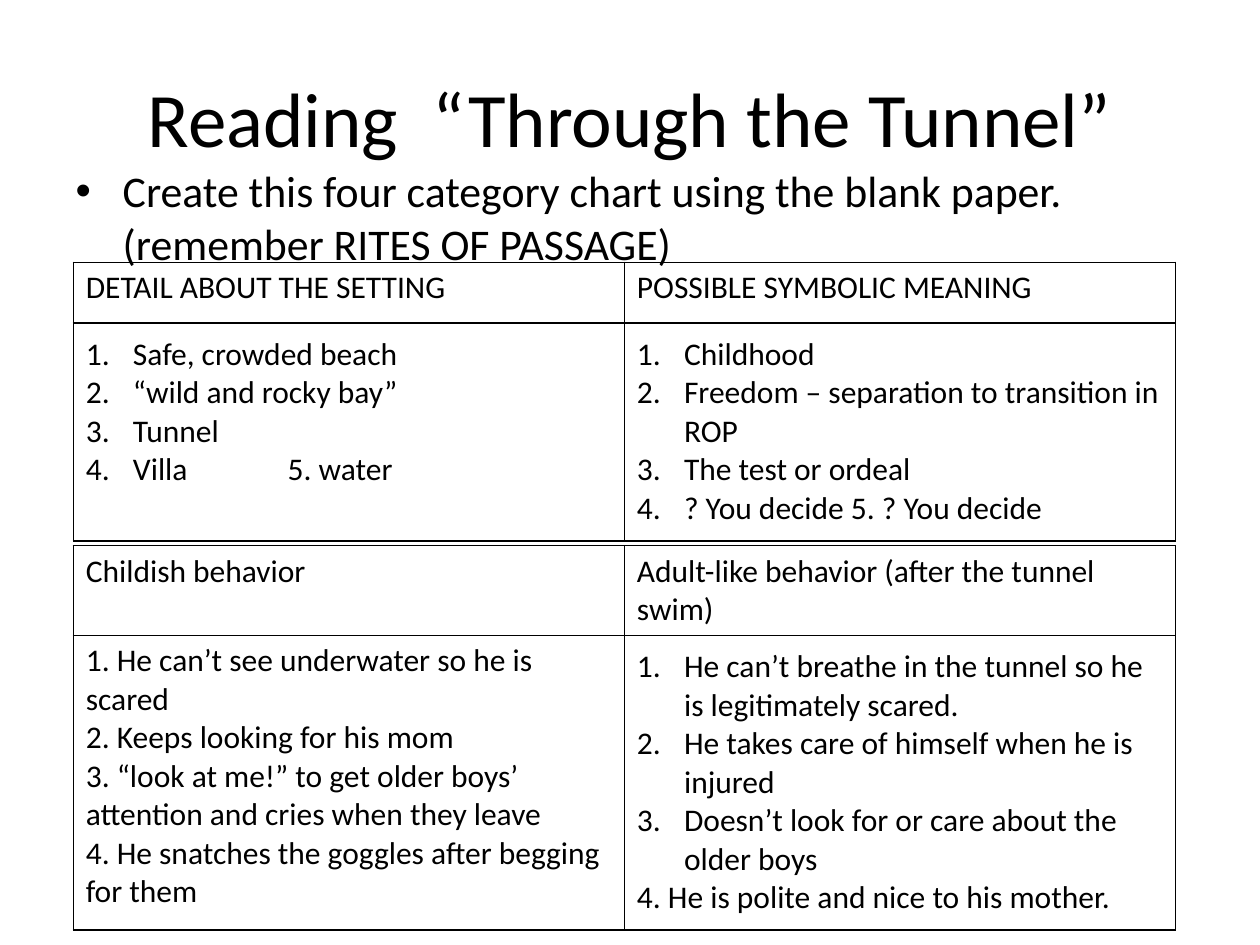
from lxml import etree
from pptx import Presentation
from pptx.dml.color import RGBColor
from pptx.enum import text
from pptx.oxml import ns
from pptx.util import Cm, Pt

# Content: each cell is (numbered items, plain paragraphs)
TITLE = "Reading  “Through the Tunnel”"
TASK = ("Create this four category chart using the blank paper. "
        "(remember RITES OF PASSAGE)")
SETTING = [
    [([], ["DETAIL ABOUT THE SETTING"]), ([], ["POSSIBLE SYMBOLIC MEANING"])],
    [(["Safe, crowded beach", "“wild and rocky bay”", "Tunnel",
       "Villa\t5. water"], []),
     (["Childhood", "Freedom – separation to transition in ROP",
       "The test or ordeal", "? You decide 5. ? You decide"], [])],
]
BEHAVIOR = [
    [([], ["Childish behavior"]),
     ([], ["Adult-like behavior (after the tunnel swim)"])],
    [([], ["1. He can’t see underwater so he is scared",
           "2. Keeps looking for his mom",
           "3. “look at me!” to get older boys’ attention and cries "
           "when they leave",
           "4. He snatches the goggles after begging for them"]),
     (["He can’t breathe in the tunnel so he is legitimately scared.",
       "He takes care of himself when he is injured",
       "Doesn’t look for or care about the older boys"],
      ["4. He is polite and nice to his mother."])],
]

# Layout
TABLE_LEFT, COL_W = Cm(1.48), Cm(11.11)
TABLES = [(SETTING, Cm(5.29), [Cm(1.22), Cm(4.4)]),
          (BEHAVIOR, Cm(11), [Cm(1.8), Cm(5.94)])]
INDENT, TAB = Cm(0.95), Cm(4.07)
BLACK = "000000"


def rgb(code):
    return RGBColor.from_string(code)


def add_child(parent, tag, **attrs):
    child = etree.SubElement(parent, ns.qn(tag))
    for key, value in attrs.items():
        child.set(key, str(value))
    return child


def write(p, words, size=18, align=text.PP_ALIGN.LEFT, bullet=None):
    """Fill a paragraph; bullet is a (tag, attributes) pair."""
    p.alignment = align
    r = p.add_run()
    r.text = words
    r.font.size, r.font.name = Pt(size), "Calibri"
    r.font.color.rgb = rgb(BLACK)
    if bullet:
        tag, attrs = bullet
        pPr = p._p.get_or_add_pPr()
        pPr.set("marL", str(INDENT))
        pPr.set("indent", str(-INDENT))
        add_child(pPr, "a:buFont", typeface="Arial" if tag == "a:buChar" else "+mj-lt")
        add_child(pPr, tag, **attrs)
        if "\t" in words:
            add_child(add_child(pPr, "a:tabLst"), "a:tab", pos=TAB, algn="l")


def add_borders(cell):
    tcPr = cell._tc.get_or_add_tcPr()
    for i, side in enumerate(("a:lnL", "a:lnR", "a:lnT", "a:lnB")):
        ln = etree.Element(ns.qn(side), w=str(Pt(1)))
        add_child(add_child(ln, "a:solidFill"), "a:srgbClr", val=BLACK)
        tcPr.insert(i, ln)


def fill_cell(cell, numbered, plain):
    cell.fill.background()
    cell.margin_left = cell.margin_right = Cm(0.25)
    cell.margin_top = cell.margin_bottom = Cm(0.25 if numbered else 0.13)
    number = ("a:buAutoNum", {"type": "arabicPeriod"})
    items = [(t, number) for t in numbered] + [(t, None) for t in plain]
    tf = cell.text_frame
    for i, (words, bullet) in enumerate(items):
        p = tf.add_paragraph() if i else tf.paragraphs[0]
        write(p, words, bullet=bullet)
    add_borders(cell)


def add_grid(s, rows, top, heights):
    table = s.shapes.add_table(len(rows), 2, TABLE_LEFT, top,
                               2 * COL_W, sum(heights)).table
    table.first_row = table.horz_banding = False
    for col in table.columns:
        col.width = COL_W
    for r, (cells, height) in enumerate(zip(rows, heights)):
        table.rows[r].height = height
        for c, (numbered, plain) in enumerate(cells):
            fill_cell(table.cell(r, c), numbered, plain)


def place(sp, left, top, width, height, anchor):
    sp.left, sp.top, sp.width, sp.height = left, top, width, height
    tf = sp.text_frame
    tf.word_wrap, tf.auto_size = True, text.MSO_AUTO_SIZE.NONE
    tf.vertical_anchor = anchor
    return tf.paragraphs[0]


def main():
    prs = Presentation()
    prs.slide_width, prs.slide_height = Cm(25.4), Cm(19.05)
    s = prs.slides.add_slide(prs.slide_layouts[1])

    # Title and task
    p = place(s.shapes.title, Cm(1.27), Cm(0.76), Cm(22.86), Cm(3.18),
              text.MSO_ANCHOR.MIDDLE)
    write(p, TITLE, size=44, align=text.PP_ALIGN.CENTER)
    p = place(s.placeholders[1], Cm(1.27), Cm(3.18), Cm(22.86), Cm(13.84),
              text.MSO_ANCHOR.TOP)
    write(p, TASK, size=25, bullet=("a:buChar", {"char": "•"}))

    # Two-by-two charts
    for rows, top, heights in TABLES:
        add_grid(s, rows, top, heights)

    prs.save("out.pptx")


if __name__ == "__main__":
    main()
